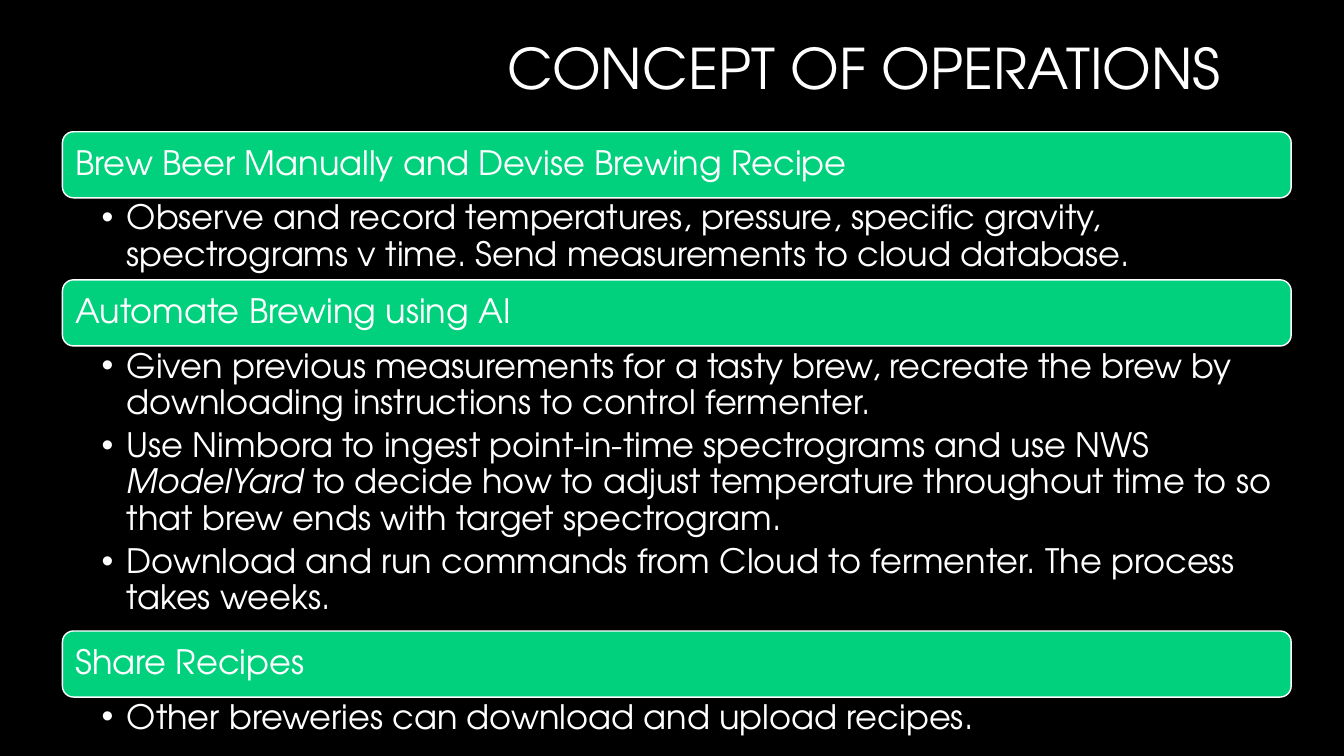
"""Build the Concept of Operations slide: three green stage bars, each with its bullet list."""
from dataclasses import dataclass

from lxml import etree
from pptx import Presentation
from pptx.dml.color import RGBColor
from pptx.enum.shapes import MSO_SHAPE
from pptx.enum.text import MSO_ANCHOR, MSO_AUTO_SIZE, PP_ALIGN
from pptx.oxml.ns import qn
from pptx.util import Pt

LEFT, RIGHT = PP_ALIGN.LEFT, PP_ALIGN.RIGHT
TOP, MIDDLE = MSO_ANCHOR.TOP, MSO_ANCHOR.MIDDLE
NO_AUTOFIT = MSO_AUTO_SIZE.NONE
ROUNDED = MSO_SHAPE.ROUNDED_RECTANGLE

TITLE = "CONCEPT OF OPERATIONS"
STAGES = [
    {
        "heading": "Brew Beer Manually and Devise Brewing Recipe",
        "list_height": 58.6,
        "bullets": [
            [("Observe and record temperatures, pressure, specific gravity, "
              "spectrograms v time. Send measurements to cloud database.", False)],
        ],
    },
    {
        "heading": "Automate Brewing using AI",
        "list_height": 203.6,
        "bullets": [
            [("Given previous measurements for a tasty brew, recreate the brew by "
              "downloading instructions to control fermenter.", False)],
            [("Use Nimbora to ingest point-in-time spectrograms and use NWS ", False),
             ("ModelYard", True),
             (" to decide how to adjust temperature throughout time to "
              "so that brew ends with target spectrogram.", False)],
            [("Download and run commands from Cloud to fermenter. "
              "The process takes weeks.", False)],
        ],
    },
    {
        "heading": "Share Recipes",
        "list_height": 41.8,
        "bullets": [[("Other breweries can download and upload recipes.", False)]],
    },
]


@dataclass(frozen=True)
class Theme:
    """Colours, font and type sizes."""
    background: RGBColor = RGBColor(0x00, 0x00, 0x00)
    ink: RGBColor = RGBColor(0xFF, 0xFF, 0xFF)
    bar: RGBColor = RGBColor(0x01, 0xD1, 0x7D)
    font: str = "TeX Gyre Adventor"
    title_size: int = 40
    text_size: int = 24


THEME = Theme()
SLIDE_SIZE = (960, 540)
TITLE_BOX = (337.7, 0, 541.4, 101.5)
STACK_LEFT, STACK_TOP, STACK_WIDTH = 44.6, 94.1, 877.7
BAR_HEIGHT = 47.2
BULLET_INDENT = 18
BULLET_GAP = 5
COMPARISON_LAYOUT = 4


def place(part, left, top, width, height):
    """Move and size a part, in points."""
    part.left, part.top, part.width, part.height = map(Pt, (left, top, width, height))


def set_frame(frame, anchor, insets):
    """Set anchor and left, top, right and bottom insets of a text frame."""
    frame.word_wrap = True
    frame.auto_size = NO_AUTOFIT
    frame.vertical_anchor = anchor
    (frame.margin_left, frame.margin_top,
     frame.margin_right, frame.margin_bottom) = map(Pt, insets)


def style(paragraph, size, alignment=LEFT, gap=0):
    """Apply the theme font and the common spacing to a paragraph."""
    paragraph.alignment = alignment
    paragraph.line_spacing = 0.9
    paragraph.space_before = Pt(0)
    paragraph.space_after = Pt(gap)
    paragraph.font.name = THEME.font
    paragraph.font.size = Pt(size)
    paragraph.font.bold = False
    paragraph.font.color.rgb = THEME.ink


def add_bullet(paragraph):
    """Give a paragraph a round bullet with a hanging indent."""
    properties = paragraph._p.get_or_add_pPr()
    properties.set("marL", str(Pt(BULLET_INDENT)))
    properties.set("indent", str(-Pt(BULLET_INDENT)))
    etree.SubElement(properties, qn("a:buFont"), typeface="Arial")
    etree.SubElement(properties, qn("a:buChar"), char="•")


def add_bar(slide, heading, top):
    """Draw a stage bar with its heading."""
    bar = slide.shapes.add_shape(ROUNDED, 0, 0, 0, 0)
    place(bar, STACK_LEFT, top, STACK_WIDTH, BAR_HEIGHT)
    bar.shadow.inherit = False
    bar.fill.solid()
    bar.fill.fore_color.rgb = THEME.bar
    bar.line.color.rgb = THEME.ink
    bar.line.width = Pt(1)
    set_frame(bar.text_frame, MIDDLE, (7.2, 7.2, 7.2, 7.2))
    bar.text_frame.text = heading
    style(bar.text_frame.paragraphs[0], THEME.text_size)


def fill_list(body, bullets, top, height):
    """Place a body placeholder under its bar and write the bullets."""
    place(body, STACK_LEFT, top, STACK_WIDTH, height)
    frame = body.text_frame
    set_frame(frame, TOP, (28, 2.2, 13.7, 2.2))
    for index, bullet in enumerate(bullets):
        paragraph = frame.add_paragraph() if index else frame.paragraphs[0]
        paragraph.level = 1
        add_bullet(paragraph)
        style(paragraph, THEME.text_size, gap=BULLET_GAP)
        for words, italic in bullet:
            run = paragraph.add_run()
            run.text = words
            if italic:
                run.font.italic = True


def main():
    """Assemble and save the slide."""
    deck = Presentation()
    deck.slide_width, deck.slide_height = map(Pt, SLIDE_SIZE)
    slide = deck.slides.add_slide(deck.slide_layouts[COMPARISON_LAYOUT])
    slide.background.fill.solid()
    slide.background.fill.fore_color.rgb = THEME.background

    title = slide.shapes.title
    place(title, *TITLE_BOX)
    set_frame(title.text_frame, MIDDLE, (7.2, 3.6, 7.2, 3.6))
    title.text_frame.text = TITLE
    style(title.text_frame.paragraphs[0], THEME.title_size, RIGHT)

    bodies = list(slide.placeholders)[1:]
    top = STACK_TOP
    for stage, body in zip(STAGES, bodies):
        add_bar(slide, stage["heading"], top)
        fill_list(body, stage["bullets"], top + BAR_HEIGHT, stage["list_height"])
        top += BAR_HEIGHT + stage["list_height"]
    for spare in bodies[len(STAGES):]:
        spare.element.getparent().remove(spare.element)

    deck.save("out.pptx")


if __name__ == "__main__":
    main()
